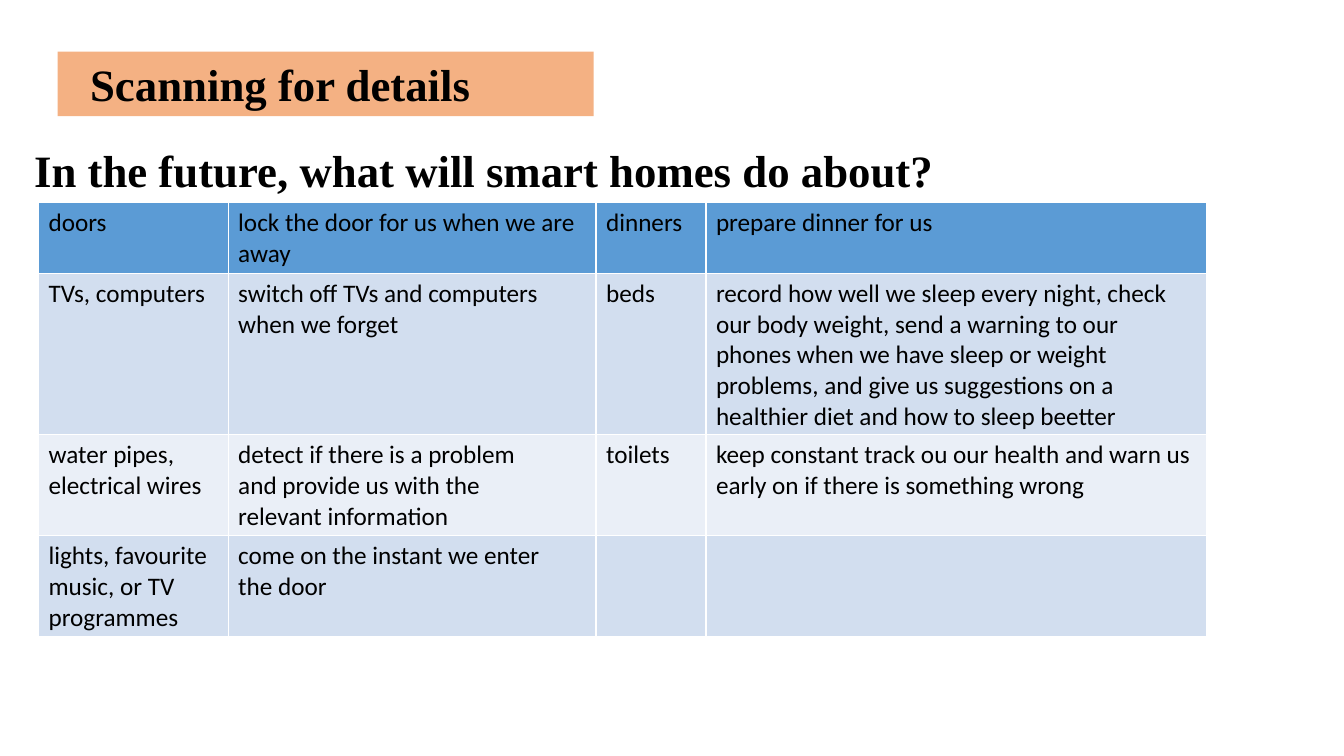
from pptx import Presentation
from pptx.dml.color import RGBColor
from pptx.enum.text import MSO_ANCHOR, MSO_AUTO_SIZE, PP_ALIGN
from pptx.util import Cm, Pt

LEFT = PP_ALIGN.LEFT
TOP = MSO_ANCHOR.TOP
FIXED = MSO_AUTO_SIZE.NONE

BLACK = RGBColor(0x00, 0x00, 0x00)
PEACH = RGBColor(0xF4, 0xB1, 0x83)
BLUE = RGBColor(0x5B, 0x9B, 0xD5)
PALE = RGBColor(0xD2, 0xDE, 0xEF)
LIGHT = RGBColor(0xEA, 0xEF, 0xF7)

ROWS = [
    ["doors", "lock the door for us when we are away",
     "dinners", "prepare dinner for us"],
    ["TVs, computers", "switch off TVs and computers\nwhen we forget",
     "beds", "record how well we sleep every night, check our body weight, "
     "send a warning to our phones when we have sleep or weight problems, "
     "and give us suggestions on a healthier diet and how to sleep beetter"],
    ["water pipes,\nelectrical wires",
     "detect if there is a problem\nand provide us with the\nrelevant information",
     "toilets", "keep constant track ou our health and warn us early on "
     "if there is something wrong"],
    ["lights, favourite music, or TV programmes",
     "come on the instant we enter\nthe door", "", ""],
]
WIDTHS = [4.78, 9.27, 2.77, 12.62]
HEIGHTS = [1.78, 4.06, 2.54, 2.54]
FILLS = [BLUE, PALE, LIGHT, PALE]


def write(frame, text, size=18, face="Calibri", bold=False):
    frame.text = text
    frame.word_wrap = True
    for para in frame.paragraphs:
        para.alignment = LEFT
        para.font.size = Pt(size)
        para.font.name = face
        para.font.bold = bold
        para.font.color.rgb = BLACK


deck = Presentation()
deck.slide_width = Cm(33.87)
deck.slide_height = Cm(19.05)
slide = deck.slides.add_slide(deck.slide_layouts[5])

title = slide.shapes.title
title.left, title.top = Cm(1.45), Cm(1.3)
title.width, title.height = Cm(13.51), Cm(1.63)
title.fill.solid()
title.fill.fore_color.rgb = PEACH
frame = title.text_frame
write(frame, "Scanning for details", size=32, face="Times New Roman", bold=True)
frame.auto_size = FIXED
frame.vertical_anchor = TOP
frame.margin_left = Cm(0.82)

query = slide.shapes.add_textbox(Cm(0.61), Cm(3.48), Cm(32.66), Cm(1.63))
write(query.text_frame, "In the future, what will smart homes do about?",
      size=32, face="Times New Roman", bold=True)

table = slide.shapes.add_table(
    len(ROWS), len(WIDTHS), Cm(0.97), Cm(5.11),
    Cm(sum(WIDTHS)), Cm(sum(HEIGHTS))).table
for column, width in zip(table.columns, WIDTHS):
    column.width = Cm(width)
for row, height, fill, texts in zip(table.rows, HEIGHTS, FILLS, ROWS):
    row.height = Cm(height)
    for cell, text in zip(row.cells, texts):
        cell.fill.solid()
        cell.fill.fore_color.rgb = fill
        write(cell.text_frame, text)

deck.save("out.pptx")
